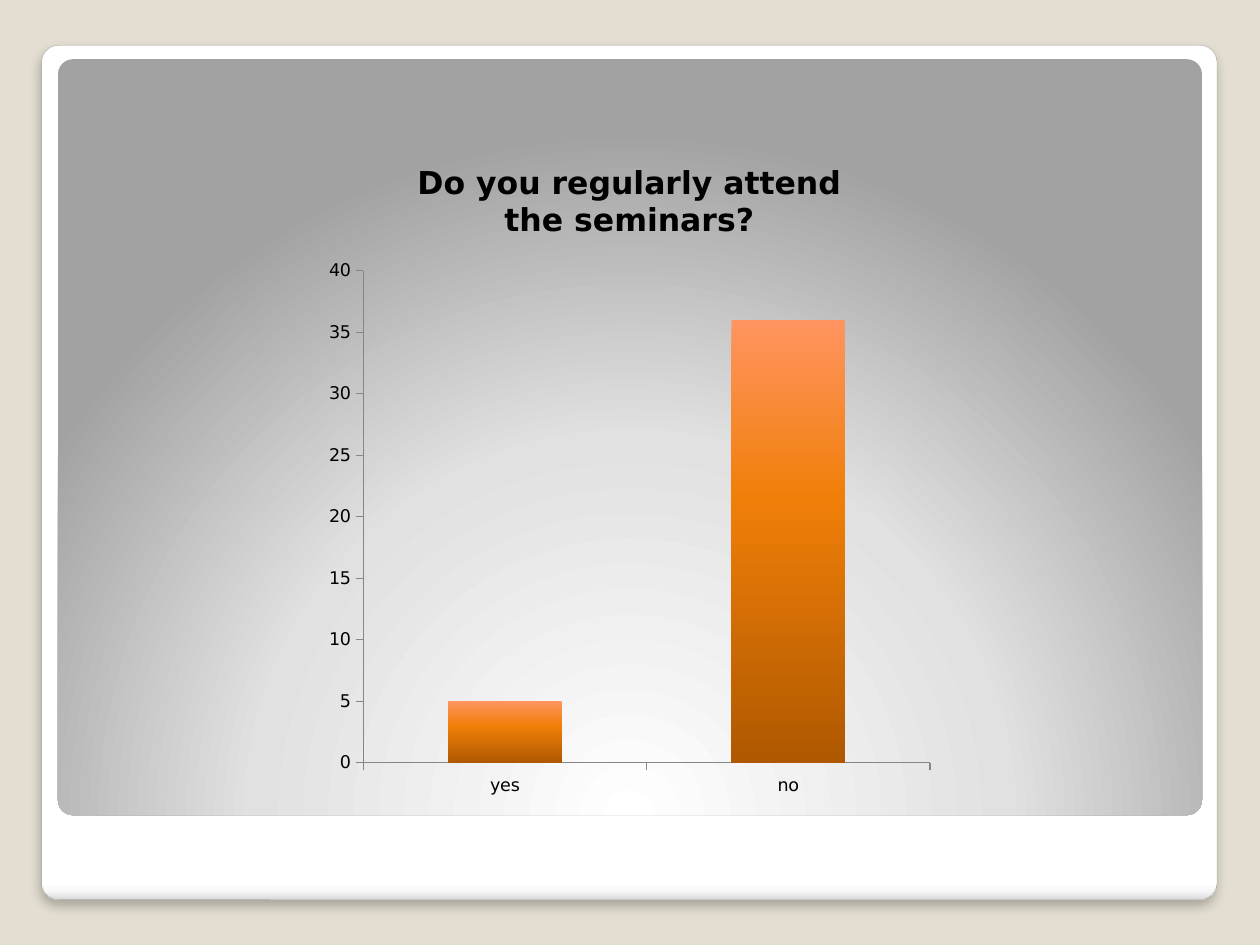
from lxml import etree
from pptx import Presentation
from pptx.chart.data import CategoryChartData
from pptx.dml.color import RGBColor
from pptx.enum.chart import XL_CHART_TYPE, XL_TICK_MARK
from pptx.enum.shapes import MSO_SHAPE
from pptx.oxml import parse_xml
from pptx.oxml.ns import nsdecls, qn
from pptx.util import Inches, Pt

ROUND = MSO_SHAPE.ROUNDED_RECTANGLE
COLUMN = XL_CHART_TYPE.COLUMN_CLUSTERED
OUT, NONE = XL_TICK_MARK.OUTSIDE, XL_TICK_MARK.NONE
FONT = "DejaVu Sans"
HEX = {"back": "E3DED1", "edge": "A4A4A4", "text": "000000", "axis": "868686"}
DOWN = '<a:lin ang="5400000" scaled="0"/>'
GLOW = ('<a:path path="circle"><a:fillToRect l="50000" t="175000" '
        'r="50000" b="-75000"/></a:path>')


def color(name):
    return RGBColor.from_string(HEX[name])


def grade(fill, props, stops, way):
    """Fill with a gradient of (percent, hex) stops."""
    fill.solid()
    marks = "".join(f'<a:gs pos="{pos * 1000}"><a:srgbClr val="{tone}"/></a:gs>'
                    for pos, tone in stops)
    grad = parse_xml(f'<a:gradFill {nsdecls("a")} rotWithShape="1">'
                     f'<a:gsLst>{marks}</a:gsLst>{way}</a:gradFill>')
    props.replace(props.find(qn("a:solidFill")), grad)


deck = Presentation()
deck.slide_width, deck.slide_height = Inches(10), Inches(7.5)
slide = deck.slides.add_slide(deck.slide_layouts[6])
slide.background.fill.solid()
slide.background.fill.fore_color.rgb = color("back")

# White card and grey panel
panels = [
    ((0.33, 0.36, 9.33, 6.78),
     [(0, "FFFFFF"), (98, "FFFFFF"), (99, "F7F7F7"), (100, "DADADA")], DOWN),
    ((0.46, 0.47, 9.08, 6),
     [(0, "FFFFFF"), (55, "E1E1E1"), (100, "A2A2A2")], GLOW),
]
shapes = []
for box, stops, way in panels:
    shape = slide.shapes.add_shape(ROUND, *map(Inches, box))
    shape.adjustments[0] = 0.02
    shape.shadow.inherit = False
    shape.line.fill.background()
    grade(shape.fill, shape._element.spPr, stops, way)
    shapes.append(shape)

# Card edge and soft shadow
card = shapes[0]
card.line.color.rgb = color("edge")
card.line.width = Pt(0.16)
card._element.spPr.find(qn("a:effectLst")).append(parse_xml(
    f'<a:outerShdw {nsdecls("a")} blurRad="{Pt(6)}" dist="{Pt(4)}" dir="5400000" '
    'rotWithShape="0"><a:srgbClr val="000000"><a:alpha val="25000"/>'
    '</a:srgbClr></a:outerShdw>'))

# Chart
data = CategoryChartData()
data.categories = ["yes", "no"]
data.add_series("Series 1", [5, 36])
frame = slide.shapes.add_chart(
    COLUMN, Inches(2.51), Inches(1.08), Inches(4.97), Inches(5.35), data)
chart = frame.chart
chart.has_legend = False
chart.font.name, chart.font.size = FONT, Pt(10)
chart.font.color.rgb = color("text")

# Chart title
chart.has_title = True
title = chart.chart_title
title.include_in_layout = False
title.text_frame.text = "Do you regularly attend the seminars?"
font = title.text_frame.paragraphs[0].runs[0].font
font.name, font.size, font.bold = FONT, Pt(18), True
font.color.rgb = color("text")

# Axes
for axis in (chart.category_axis, chart.value_axis):
    axis.has_major_gridlines = False
    axis.major_tick_mark, axis.minor_tick_mark = OUT, NONE
    axis.format.line.color.rgb = color("axis")
    axis.format.line.width = Pt(0.75)
scale = chart.value_axis
scale.minimum_scale, scale.maximum_scale, scale.major_unit = 0, 40, 5

# Columns
plot = chart.plots[0]
plot.gap_width = 150
plot.vary_by_categories = False
bars = plot.series[0]
bars.invert_if_negative = False
fill = bars.format.fill
grade(fill, bars._element.spPr,
      [(0, "FF9460"), (40, "F07F09"), (100, "AF5800")], DOWN)

# Plot area position
area = chart._chartSpace.chart.plotArea
for old in area.findall(qn("c:layout")):
    area.remove(old)
layout = etree.Element(qn("c:layout"))
manual = etree.SubElement(layout, qn("c:manualLayout"))
for tag, val in [("layoutTarget", "inner"), ("xMode", "edge"), ("yMode", "edge"),
                 ("x", "0.075"), ("y", "0.2"), ("w", "0.905"), ("h", "0.73")]:
    etree.SubElement(manual, qn(f"c:{tag}")).set("val", val)
area.insert(0, layout)

deck.save("out.pptx")
